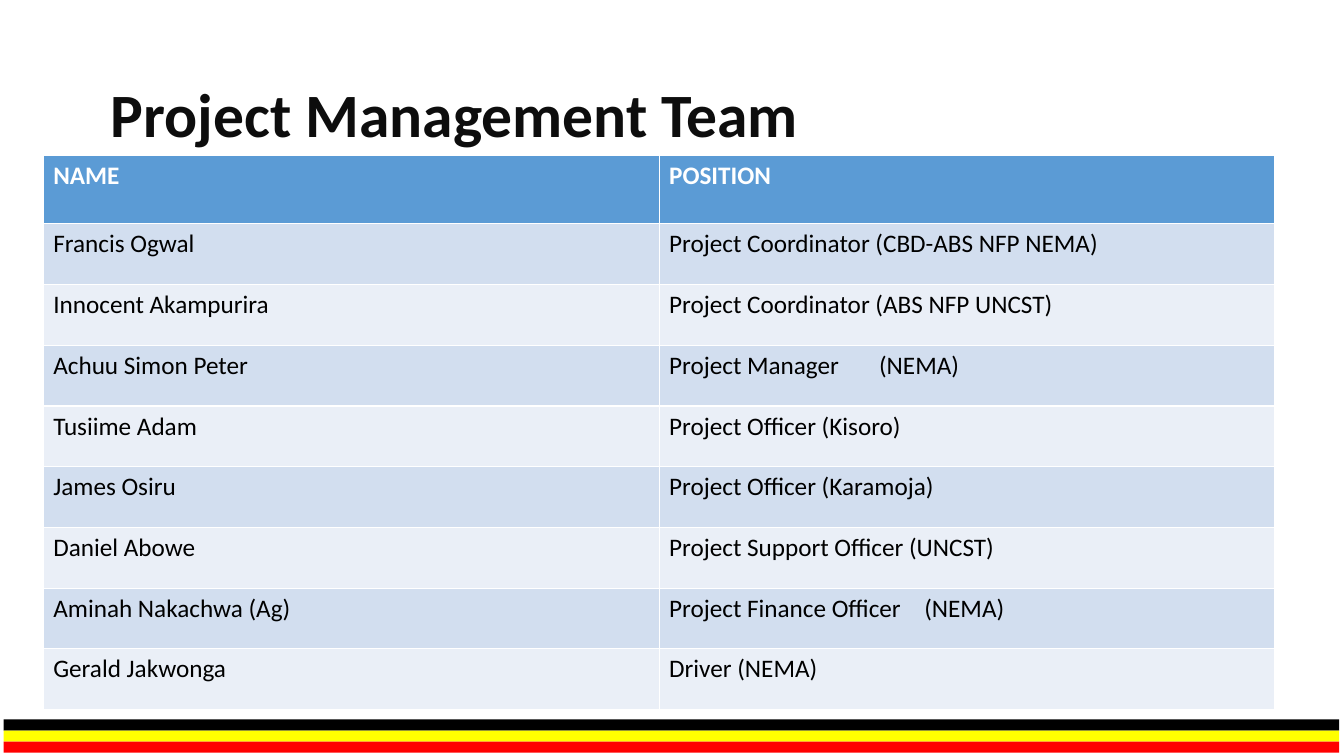
from lxml import etree
from pptx import Presentation
from pptx.dml.color import RGBColor
from pptx.enum.shapes import MSO_SHAPE
from pptx.enum.text import MSO_ANCHOR, PP_ALIGN
from pptx.oxml.ns import qn
from pptx.util import Cm, Pt

RECTANGLE = MSO_SHAPE.RECTANGLE
MIDDLE = MSO_ANCHOR.MIDDLE
LEFT = PP_ALIGN.LEFT
TITLE_ONLY = 5

FONT = "Calibri"
HEADER_FILL = "5B9BD5"
BAND_FILLS = ("D2DEEF", "EAEFF7")
STRIPE_COLOURS = ("000000", "FFFF00", "FF0000")
HEADER_HEIGHT, ROW_HEIGHT, COLUMN_WIDTH = 1.73, 1.53, 15.52
STRIPE_HEIGHT = 0.28

HEADINGS = ("NAME", "POSITION")
# name, position, tab stop in centimetres for a position with a gap
TEAM = (
    ("Francis Ogwal", "Project Coordinator (CBD-ABS NFP NEMA)", None),
    ("Innocent Akampurira", "Project Coordinator (ABS NFP UNCST)", None),
    ("Achuu Simon Peter", "Project Manager\t(NEMA)", 5.29),
    ("Tusiime Adam", "Project Officer (Kisoro)", None),
    ("James Osiru", "Project Officer (Karamoja)", None),
    ("Daniel Abowe", "Project Support Officer (UNCST)", None),
    ("Aminah Nakachwa (Ag)", "Project Finance Officer\t(NEMA)", 6.43),
    ("Gerald Jakwonga", "Driver (NEMA)", None),
)


def colour(hex_string):
    return RGBColor.from_string(hex_string)


def format_font(paragraph, size, hex_string, bold):
    font = paragraph.font
    font.name = FONT
    font.size = Pt(size)
    font.bold = bold
    font.color.rgb = colour(hex_string)


def add_tab_stop(paragraph, position):
    properties = paragraph._p.get_or_add_pPr()
    tab_list = etree.Element(qn("a:tabLst"))
    etree.SubElement(tab_list, qn("a:tab"), pos=str(int(Cm(position))), algn="l")
    properties.insert(0, tab_list)


def set_title(slide, text):
    title = slide.shapes.title
    title.left, title.top = Cm(2.54), Cm(1.73)
    title.width, title.height = Cm(28.78), Cm(2.44)
    title.text_frame.vertical_anchor = MIDDLE
    title.text_frame.text = text
    paragraph = title.text_frame.paragraphs[0]
    paragraph.alignment = LEFT
    paragraph.line_spacing = 0.9
    format_font(paragraph, 44, "0D0D0D", True)


def fill_cell(cell, text, fill, text_colour, bold):
    cell.fill.solid()
    cell.fill.fore_color.rgb = colour(fill)
    cell.text = text
    paragraph = cell.text_frame.paragraphs[0]
    format_font(paragraph, 18, text_colour, bold)
    return paragraph


def add_team_table(slide):
    height = HEADER_HEIGHT + ROW_HEIGHT * len(TEAM)
    frame = slide.shapes.add_table(
        len(TEAM) + 1, len(HEADINGS), Cm(1.09), Cm(3.91),
        Cm(COLUMN_WIDTH * len(HEADINGS)), Cm(height))
    table = frame.table
    for column in table.columns:
        column.width = Cm(COLUMN_WIDTH)
    table.rows[0].height = Cm(HEADER_HEIGHT)
    for index, heading in enumerate(HEADINGS):
        fill_cell(table.cell(0, index), heading, HEADER_FILL, "FFFFFF", True)
    for row, (name, position, tab_stop) in enumerate(TEAM, start=1):
        table.rows[row].height = Cm(ROW_HEIGHT)
        fill = BAND_FILLS[(row - 1) % 2]
        fill_cell(table.cell(row, 0), name, fill, "000000", False)
        paragraph = fill_cell(table.cell(row, 1), position, fill, "000000", False)
        if tab_stop:
            add_tab_stop(paragraph, tab_stop)


def add_flag_stripes(slide):
    group = slide.shapes.add_group_shape()
    for index, hex_string in enumerate(STRIPE_COLOURS):
        stripe = group.shapes.add_shape(
            RECTANGLE, Cm(0.09), Cm(18.13 + index * STRIPE_HEIGHT),
            Cm(33.66), Cm(STRIPE_HEIGHT))
        stripe.shadow.inherit = False
        stripe.fill.solid()
        stripe.fill.fore_color.rgb = colour(hex_string)
        stripe.line.fill.background()


def main():
    presentation = Presentation()
    presentation.slide_width = Cm(33.87)
    presentation.slide_height = Cm(19.05)
    slide = presentation.slides.add_slide(presentation.slide_layouts[TITLE_ONLY])
    set_title(slide, "Project Management Team")
    add_team_table(slide)
    add_flag_stripes(slide)
    presentation.save("out.pptx")


if __name__ == "__main__":
    main()
